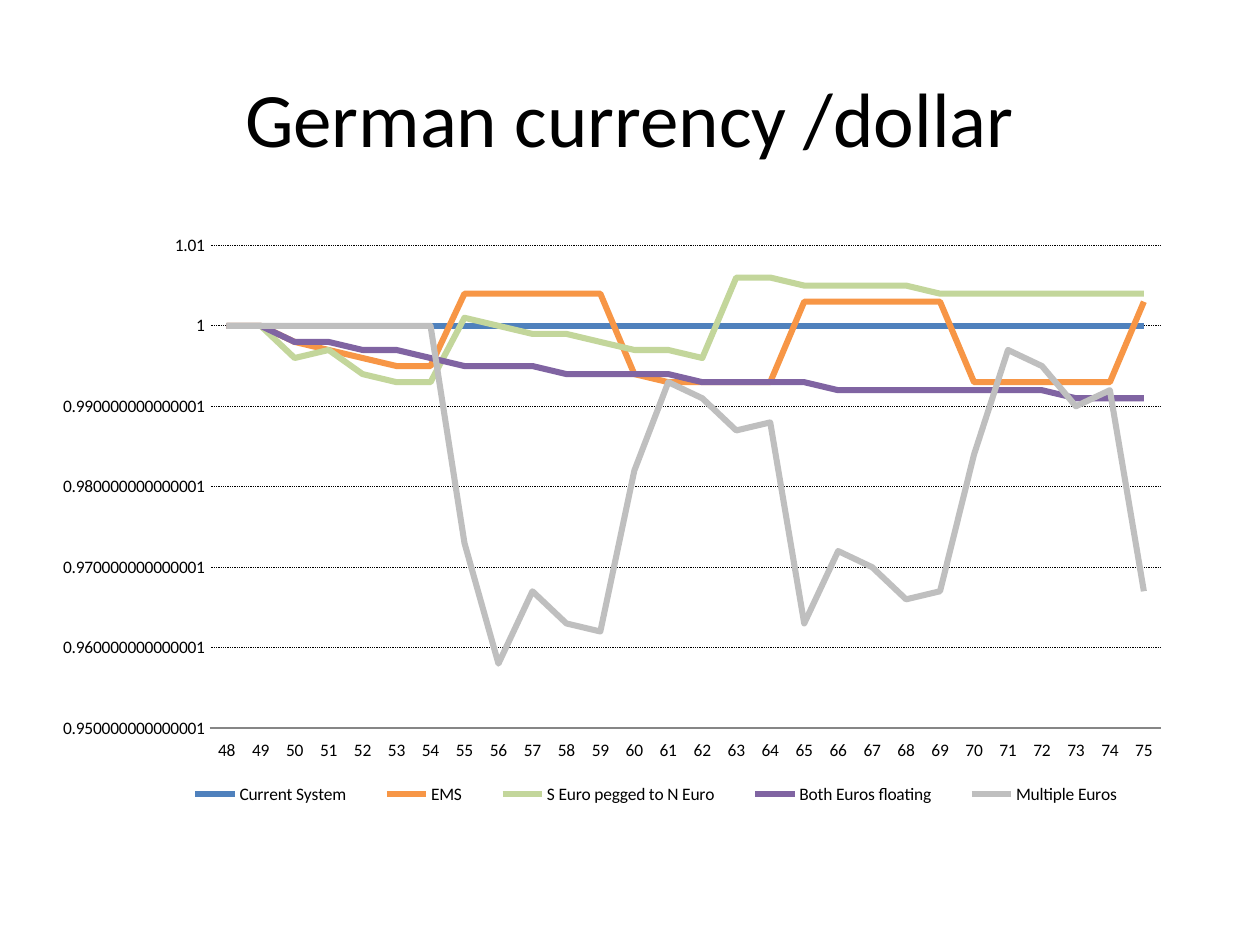
from lxml import etree
from pptx import Presentation
from pptx import util as u
from pptx.chart.data import CategoryChartData
from pptx.dml.color import RGBColor
from pptx.enum import chart as ch, dml, text
from pptx.oxml import ns

FONT = "Calibri"
HUES = {
    "ink": "000000", "axis": "868686",
    "Current System": "4F81BD", "EMS": "F79646",
    "S Euro pegged to N Euro": "C3D69B",
    "Both Euros floating": "8064A2", "Multiple Euros": "BFBFBF",
}
YEARS = range(48, 76)
RATES = {
    "Current System": [1] * len(YEARS),
    "EMS": [1, 1, 0.998, 0.997, 0.996, 0.995, 0.995] + [1.004] * 5
           + [0.994] + [0.993] * 4 + [1.003] * 5 + [0.993] * 5 + [1.003],
    "S Euro pegged to N Euro": [
        1, 1, 0.996, 0.997, 0.994, 0.993, 0.993, 1.001, 1, 0.999,
        0.999, 0.998, 0.997, 0.997, 0.996, 1.006, 1.006]
        + [1.005] * 4 + [1.004] * 7,
    "Both Euros floating": [1, 1, 0.998, 0.998, 0.997, 0.997, 0.996]
        + [0.995] * 3 + [0.994] * 4 + [0.993] * 4 + [0.992] * 7 + [0.991] * 3,
    "Multiple Euros": [1] * 7 + [
        0.973, 0.958, 0.967, 0.963, 0.962, 0.982, 0.993, 0.991, 0.987, 0.988,
        0.963, 0.972, 0.97, 0.966, 0.967, 0.984, 0.997, 0.995, 0.99, 0.992,
        0.967],
}


def hue(name):
    return RGBColor.from_string(HUES[name])


def style(font, size):
    font.name, font.size = FONT, u.Pt(size)
    font.color.rgb = hue("ink")


def stroke(line, name, width):
    line.color.rgb = hue(name)
    line.width = u.Pt(width)


def place(part, after, box, inner=False):
    for old in part.findall(ns.qn("c:layout")):
        part.remove(old)
    layout = etree.Element(ns.qn("c:layout"))
    manual = etree.SubElement(layout, ns.qn("c:manualLayout"))
    rows = [("layoutTarget", "inner")] if inner else []
    rows += [("xMode", "edge"), ("yMode", "edge")] + list(zip("xywh", box))
    for tag, val in rows:
        etree.SubElement(manual, ns.qn("c:" + tag)).set("val", str(val))
    if after is None:
        part.insert(0, layout)
    else:
        after.addnext(layout)


def add_title(slide, box):
    title = slide.shapes.title
    title.left, title.top, title.width, title.height = box
    frame = title.text_frame
    frame.text = "German currency /dollar"
    frame.vertical_anchor = text.MSO_ANCHOR.MIDDLE
    para = frame.paragraphs[0]
    para.alignment = text.PP_ALIGN.CENTER
    style(para.runs[0].font, 44)


def add_rates(slide, box):
    data = CategoryChartData()
    data.categories = [str(year) for year in YEARS]
    for name, vals in RATES.items():
        data.add_series(name, vals)
    chart = slide.shapes.add_chart(ch.XL_CHART_TYPE.LINE, *box, data).chart
    style(chart.font, 10)
    chart.has_title = False
    plot = chart.plots[0]
    plot.vary_by_categories = False
    for line in plot.series:
        line.smooth = False
        line.marker.style = ch.XL_MARKER_STYLE.NONE
        stroke(line.format.line, line.name, 3.5)

    base = chart.category_axis
    base.major_tick_mark = ch.XL_TICK_MARK.NONE
    base.tick_label_position = ch.XL_TICK_LABEL_POSITION.LOW
    stroke(base.format.line, "axis", 0.75)

    side = chart.value_axis
    side.minimum_scale = 0.950000000000001
    side.maximum_scale = 1.010000000000001
    side.major_unit = 0.01
    side.major_tick_mark = ch.XL_TICK_MARK.NONE
    side.tick_labels.number_format = "General"
    side.tick_labels.number_format_is_linked = False
    side.format.line.fill.background()
    grid = side.major_gridlines.format.line
    stroke(grid, "ink", 0.5)
    grid.dash_style = dml.MSO_LINE.ROUND_DOT

    chart.has_legend = True
    key = chart.legend
    key.position = ch.XL_LEGEND_POSITION.BOTTOM
    key.include_in_layout = False
    root = chart.element
    area = root.find(".//" + ns.qn("c:plotArea"))
    legend = root.find(".//" + ns.qn("c:legend"))
    place(area, None, (0.124, 0.04, 0.844, 0.774), True)
    place(legend, legend.find(ns.qn("c:legendPos")), (0.08, 0.89, 0.88, 0.06))


def main():
    deck = Presentation()
    deck.slide_width, deck.slide_height = u.Inches(10), u.Inches(7.5)
    slide = deck.slides.add_slide(deck.slide_layouts[5])
    add_title(slide, [u.Inches(n) for n in (0.5, 0.3, 9, 1.25)])
    add_rates(slide, [u.Inches(n) for n in (0.5, 1.75, 9, 4.95)])
    deck.save("out.pptx")


if __name__ == "__main__":
    main()
